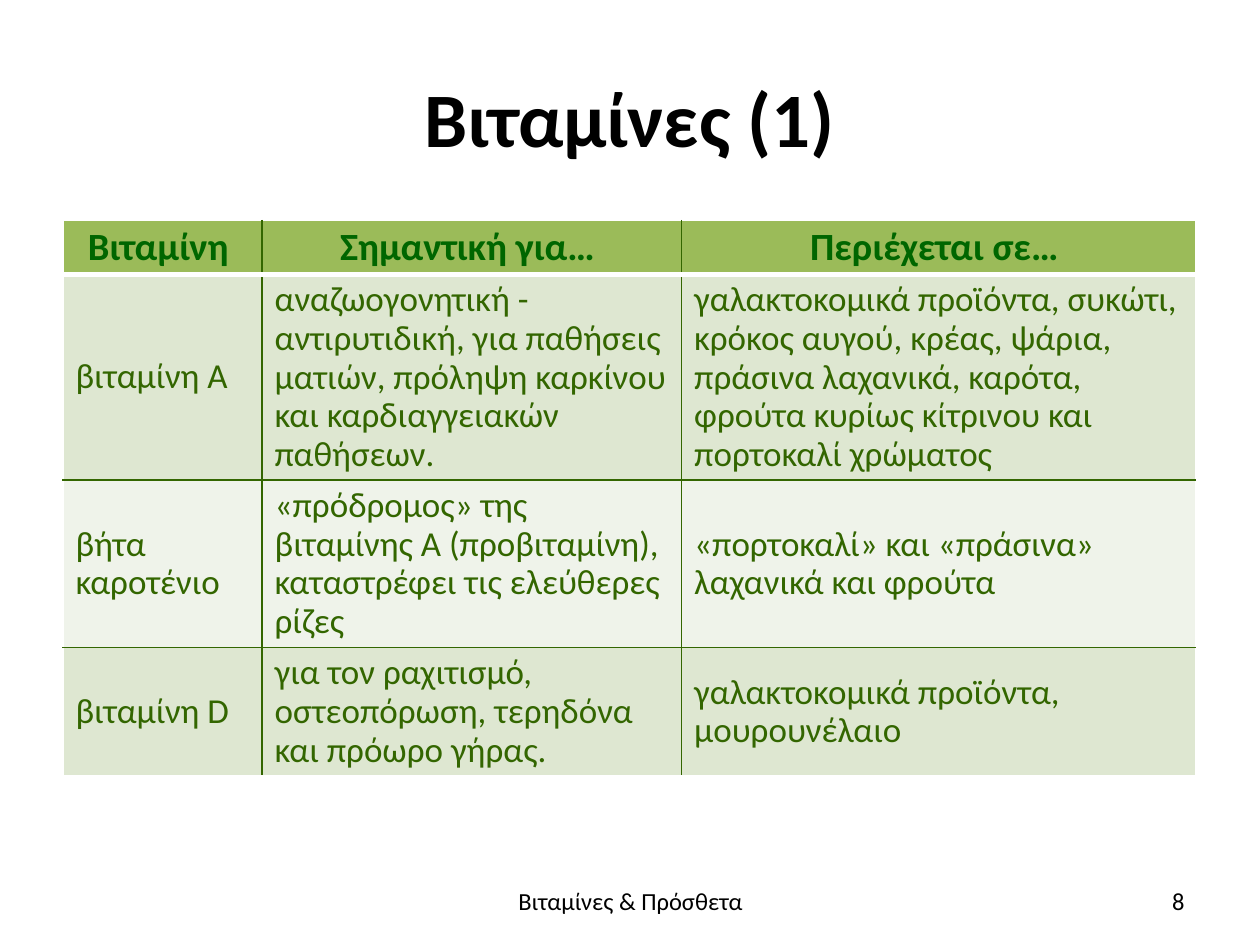
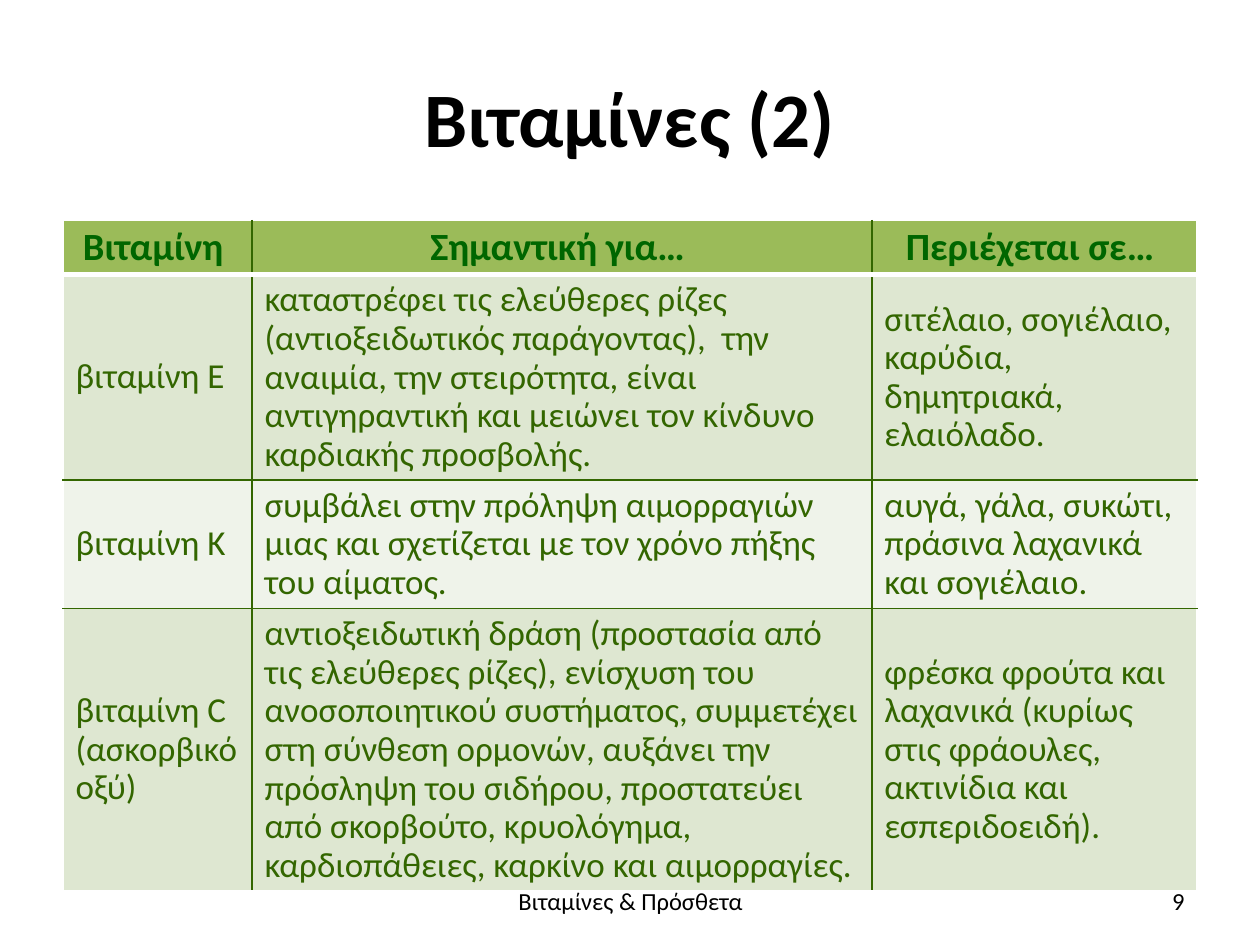
from lxml import etree
from pptx import Presentation
from pptx.dml.color import RGBColor
from pptx.enum.text import MSO_ANCHOR, PP_ALIGN
from pptx.oxml.ns import qn
from pptx.util import Inches, Pt

LEFT, CENTER, RIGHT = PP_ALIGN.LEFT, PP_ALIGN.CENTER, PP_ALIGN.RIGHT
MIDDLE = MSO_ANCHOR.MIDDLE

FONT = "Calibri"
BLACK = RGBColor(0x00, 0x00, 0x00)
WHITE = RGBColor(0xFF, 0xFF, 0xFF)
HEADER_FILL = RGBColor(0x9B, 0xBB, 0x59)
HEADER_TEXT = RGBColor(0x00, 0x66, 0x00)
BODY_GREEN = RGBColor(0x33, 0x66, 0x00)
BAND_FILLS = (RGBColor(0xDE, 0xE7, 0xD1), RGBColor(0xEF, 0xF3, 0xEA))

FOOTER = "Βιταμίνες & Πρόσθετα"
HEADINGS = ("Βιταμίνη ", "Σημαντική για… ", "Περιέχεται σε… ")
FIRST_NUMBER = 8
TABLE_LEFT, TABLE_TOP = 0.5, 1.75

PAGES = [
    {
        "title": "Βιταμίνες (1)",
        "widths": (1.58, 3.33, 4.08),
        "heights": (0.43, 1.63, 1.33, 1.02),
        "vitamins": [
            ("βιταμίνη Α",
             "αναζωογονητική - αντιρυτιδική, για παθήσεις ματιών, πρόληψη "
             "καρκίνου και καρδιαγγειακών παθήσεων.",
             "γαλακτοκομικά προϊόντα, συκώτι, κρόκος αυγού, κρέας, ψάρια, "
             "πράσινα λαχανικά, καρότα, φρούτα κυρίως κίτρινου και "
             "πορτοκαλί χρώματος"),
            ("βήτα καροτένιο",
             "«πρόδρομος» της βιταμίνης Α (προβιταμίνη), καταστρέφει τις "
             "ελεύθερες ρίζες",
             "«πορτοκαλί» και «πράσινα» λαχανικά και φρούτα"),
            ("βιταμίνη D",
             "για τον ραχιτισμό, οστεοπόρωση, τερηδόνα και πρόωρο γήρας.",
             "γαλακτοκομικά προϊόντα, μουρουνέλαιο"),
        ],
    },
    {
        "title": "Βιταμίνες (2)",
        "widths": (1.5, 4.92, 2.58),
        "heights": (0.43, 1.63, 1.02, 2.24),
        "vitamins": [
            ("βιταμίνη Ε",
             "καταστρέφει τις ελεύθερες ρίζες (αντιοξειδωτικός παράγοντας),  "
             "την αναιμία, την στειρότητα, είναι αντιγηραντική και μειώνει "
             "τον κίνδυνο καρδιακής προσβολής.",
             "σιτέλαιο, σογιέλαιο, καρύδια, δημητριακά, ελαιόλαδο."),
            ("βιταμίνη Κ",
             "συμβάλει στην πρόληψη αιμορραγιών μιας και σχετίζεται με τον "
             "χρόνο πήξης του αίματος.",
             "αυγά, γάλα, συκώτι, πράσινα λαχανικά και σογιέλαιο."),
            ("βιταμίνη C \n(ασκορβικό οξύ)",
             "αντιοξειδωτική δράση (προστασία από τις ελεύθερες ρίζες), "
             "ενίσχυση του ανοσοποιητικού συστήματος, συμμετέχει στη σύνθεση "
             "ορμονών, αυξάνει την πρόσληψη του σιδήρου, προστατεύει από "
             "σκορβούτο, κρυολόγημα, καρδιοπάθειες, καρκίνο και αιμορραγίες.",
             "φρέσκα φρούτα και λαχανικά (κυρίως στις φράουλες, ακτινίδια "
             "και εσπεριδοειδή)."),
        ],
    },
]


def write(frame, text, size, color, align=LEFT, bold=False, spacing=None):
    frame.word_wrap = True
    para = frame.paragraphs[0]
    para.alignment = align
    if spacing:
        para.line_spacing = spacing
    for index, line in enumerate(text.split("\n")):
        if index:
            para.add_line_break()
        span = para.add_run()
        span.text = line
        span.font.name = FONT
        span.font.size = Pt(size)
        span.font.bold = bold
        span.font.color.rgb = color


def add_text(page, place, text, size, align, bold=False):
    box = page.shapes.add_textbox(*map(Inches, place))
    box.text_frame.vertical_anchor = MIDDLE
    write(box.text_frame, text, size, BLACK, align, bold)


def set_borders(cell, borders):
    properties = cell._tc.get_or_add_tcPr()
    for index, (side, color, width) in enumerate(borders):
        line = etree.Element(qn(f"a:ln{side}"), w=str(Pt(width)))
        fill = etree.SubElement(line, qn("a:solidFill"))
        etree.SubElement(fill, qn("a:srgbClr"), val=str(color))
        properties.insert(index, line)


def cell_borders(row, column, last_row, last_column):
    bottom = WHITE if row in (0, last_row) else BODY_GREEN
    return (
        ("L", BODY_GREEN if column else WHITE, 1),
        ("R", BODY_GREEN if column < last_column else WHITE, 1),
        ("T", BODY_GREEN if row > 1 else WHITE, 3 if row == 1 else 1),
        ("B", bottom, 1 if row else 3),
    )


def add_vitamin_table(page, widths, heights, vitamins):
    rows = [HEADINGS, *vitamins]
    place = (TABLE_LEFT, TABLE_TOP, sum(widths), sum(heights))
    table = page.shapes.add_table(
        len(rows), len(widths), *map(Inches, place)).table
    for column, width in zip(table.columns, widths):
        column.width = Inches(width)
    for table_row, height in zip(table.rows, heights):
        table_row.height = Inches(height)
    for r, texts in enumerate(rows):
        for c, text in enumerate(texts):
            cell = table.cell(r, c)
            cell.vertical_anchor = MIDDLE
            cell.fill.solid()
            if r == 0:
                cell.fill.fore_color.rgb = HEADER_FILL
                write(cell.text_frame, text, 22, HEADER_TEXT, CENTER, True, 0.9)
            else:
                cell.fill.fore_color.rgb = BAND_FILLS[(r - 1) % 2]
                write(cell.text_frame, text, 20, BODY_GREEN, spacing=0.9)
            set_borders(
                cell, cell_borders(r, c, len(rows) - 1, len(widths) - 1))


def main():
    deck = Presentation()
    deck.slide_width, deck.slide_height = Inches(10), Inches(7.5)
    for number, content in enumerate(PAGES, FIRST_NUMBER):
        page = deck.slides.add_slide(deck.slide_layouts[6])
        add_text(page, (0.5, 0.3, 9, 1.25), content["title"], 44, CENTER, True)
        add_vitamin_table(
            page, content["widths"], content["heights"], content["vitamins"])
        add_text(page, (3.42, 6.95, 3.17, 0.4), FOOTER, 14, CENTER)
        add_text(page, (7.17, 6.95, 2.33, 0.4), str(number), 14, RIGHT)
    deck.save("out.pptx")


if __name__ == "__main__":
    main()
